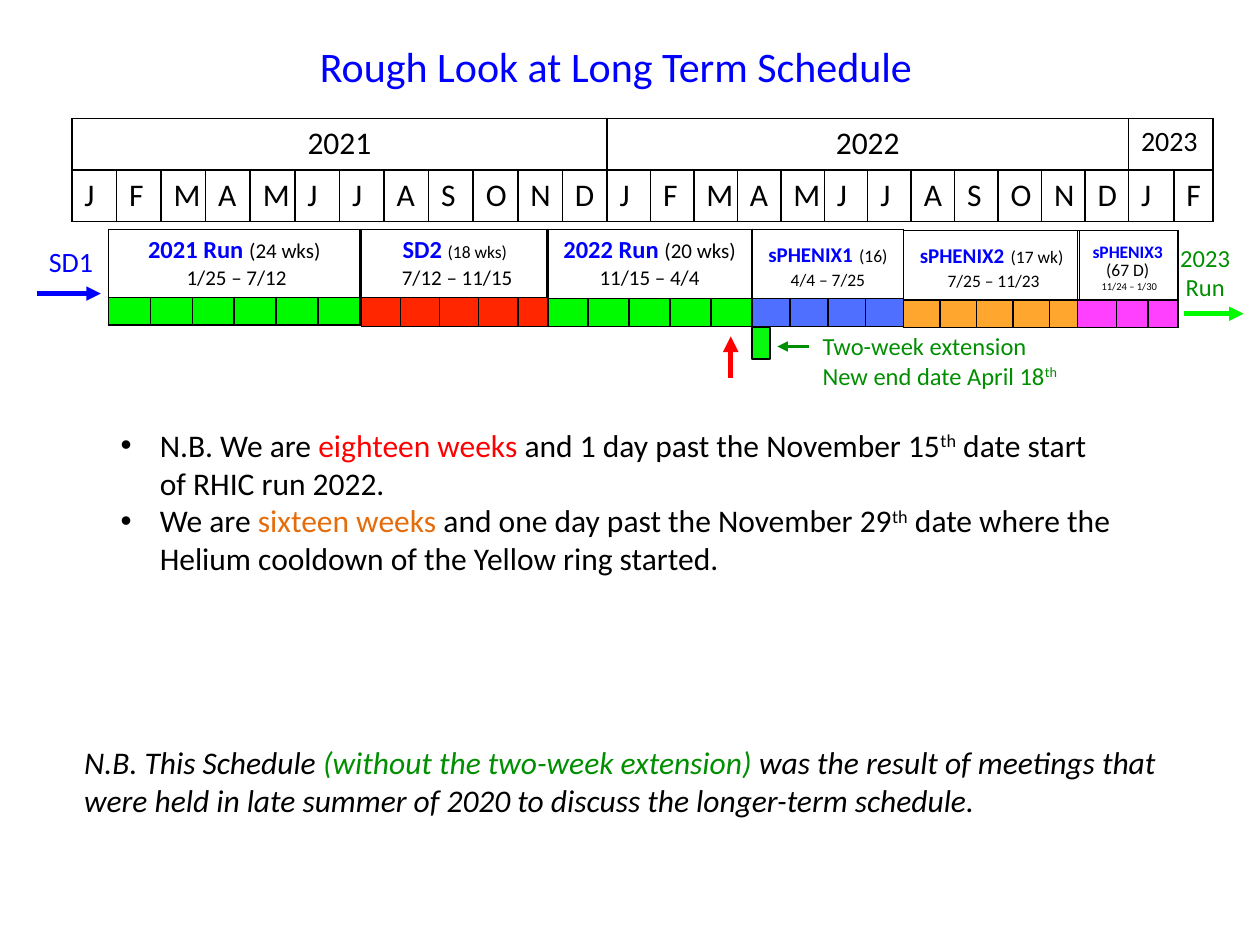
from typing import NamedTuple, Optional

from lxml import etree
from pptx import Presentation
from pptx import util as u
from pptx.dml.color import RGBColor
from pptx.enum import shapes, text
from pptx.oxml import ns

Inches, Pt = u.Inches, u.Pt
BLACK, BLUE, GREEN, RED = "000000", "0000FF", "008F00", "FF0000"
LIME, ORANGE = "00FA00", "E46C0A"
CENTER = text.PP_ALIGN.CENTER


class Run(NamedTuple):
    text: str
    size: Optional[float] = None
    color: Optional[str] = None
    bold: bool = False
    raised: bool = False


class Phase(NamedTuple):
    left: float
    top: float
    widths: list
    heights: tuple
    color: str
    opacity: int
    label: list
    spacing: Optional[float] = None


class Arrow(NamedTuple):
    start: tuple
    end: tuple
    color: str
    weight: float


class Note(NamedTuple):
    box: tuple
    paragraphs: list
    style: dict
    wrap: bool = True


def name(label: str, size: float = 14) -> Run:
    return Run(label, size, BLUE, bold=True)


def th() -> Run:
    return Run("th", raised=True)


PHASES = [
    Phase(0.86, 1.82, [2 / 6] * 6, (0.54, 0.22), LIME, 100,
          [[name("2021 Run "), Run("(24 wks)", 12)], [Run(" 1/25 – 7/12", 12)]]),
    Phase(4.34, 1.82, [1.63 / 5] * 5, (0.55, 0.22), LIME, 100,
          [[name("2022 Run "), Run("(20 wks) 11/15 – 4/4", 12)]]),
    Phase(2.87, 1.82, [0.31] * 4 + [0.23], (0.54, 0.23), "FF2600", 100,
          [[name("SD2 "), Run("(18 wks)", 10)], [Run(" 7/12 – 11/15", 12)]]),
    Phase(5.97, 1.82, [0.3] * 4, (0.55, 0.22), "0432FF", 70,
          [[name("sPHENIX1", 12), name(" ", 16), Run("(16) 4/4 – 7/25", 10)]]),
    Phase(7.17, 1.83, [0.29] * 4 + [0.23], (0.55, 0.22), "FF9300", 82,
          [[name("sPHENIX2", 12), name(" ", 16), Run("(17 wk)", 10)],
           [Run(" 7/25 – 11/23", 10)]]),
    Phase(8.55, 1.83, [0.31, 0.25, 0.23], (0.54, 0.22), "FF40FF", 100,
          [[name("sPHENIX3", 10), name(" ", 16), Run("(67 D)", 10)],
           [Run(" ", 8), Run("11/24 – 1/30", 6)]], 0.78),
]

ARROWS = [
    Arrow((0.29, 2.33), (0.8, 2.33), BLUE, 2.75),
    Arrow((9.4, 2.49), (9.87, 2.49), LIME, 2.75),
    Arrow((5.8, 3), (5.8, 2.67), RED, 3),
    Arrow((6.42, 2.75), (6.17, 2.75), GREEN, 1.5),
]

NOTES = [
    Note((0.29, 1.89, 0.56, 0.37), [[Run("SD1")]], dict(size=16, color=BLUE), wrap=False),
    Note((2.44, 0.27, 5.13, 0.5), [[Run("Rough Look at Long Term Schedule")]],
         dict(size=24, color=BLUE)),
    Note((9.2, 1.88, 0.73, 0.57), [[Run("2023")], [Run("Run")]],
         dict(size=14, color=GREEN, align=CENTER)),
    Note((6.43, 2.58, 2.9, 0.57),
         [[Run("Two-week extension")], [Run("New end date April 18"), th()]],
         dict(size=14, color=GREEN)),
    Note((0.86, 3.33, 8.09, 1.31),
         [[Run("N.B. We are "), Run("eighteen weeks ", color=RED),
           Run("and 1 day past the November 15"), th(),
           Run(" date start of RHIC run 2022.")],
          [Run("We are "), Run("sixteen weeks ", color=ORANGE),
           Run("and one day past the November 29"), th(),
           Run(" date where the Helium cooldown of the Yellow ring started.")]],
         dict(bullet=True)),
    Note((0.57, 5.85, 8.93, 0.71),
         [[Run("N.B. This Schedule "),
           Run("(without the two-week extension)", color=GREEN),
           Run(" was the result of meetings that were held in late summer of 2020 "
               "to discuss the longer-term schedule.")]],
         dict(italic=True)),
]


def rgb(color: str) -> RGBColor:
    return RGBColor.from_string(color)


def add_xml(parent, tag: str, **attributes):
    return etree.SubElement(parent, ns.qn(tag), **attributes)


def write_text(frame, paragraphs: list, size: float = 18, color: str = BLACK,
               align=None, italic: bool = False, spacing=None, bullet: bool = False) -> None:
    for index, runs in enumerate(paragraphs):
        paragraph = frame.add_paragraph() if index else frame.paragraphs[0]
        paragraph.alignment = align
        if spacing:
            paragraph.line_spacing = spacing
        if bullet:
            properties = paragraph._p.get_or_add_pPr()
            properties.set("marL", str(Inches(0.31)))
            properties.set("indent", str(Inches(-0.31)))
            add_xml(properties, "a:buFont", typeface="Arial")
            add_xml(properties, "a:buChar", char="•")
        for part in runs:
            run = paragraph.add_run()
            run.text = part.text
            run.font.name = "Calibri"
            run.font.size = Pt(part.size or size)
            run.font.bold = part.bold
            run.font.italic = italic
            run.font.color.rgb = rgb(part.color or color)
            if part.raised:
                run.font._element.set("baseline", "30000")


def add_grid(slide, left: float, top: float, widths: list, heights: tuple):
    """Add an unfilled table with thin black borders."""
    table = slide.shapes.add_table(
        len(heights), len(widths), Inches(left), Inches(top),
        Inches(sum(widths)), Inches(sum(heights))).table
    table.first_row = table.horz_banding = False
    for column, width in zip(table.columns, widths):
        column.width = Inches(width)
    for row, height in zip(table.rows, heights):
        row.height = Inches(height)
    for cell in table.iter_cells():
        properties = cell._tc.get_or_add_tcPr()
        for side in ("L", "R", "T", "B"):
            border = add_xml(properties, f"a:ln{side}", w=str(Pt(1)))
            add_xml(add_xml(border, "a:solidFill"), "a:srgbClr", val=BLACK)
        cell.fill.background()
    return table


def add_calendar(slide) -> None:
    widths = [4.25 / 12] * 12 + [4.14 / 12] * 12 + [0.36, 0.31]
    table = add_grid(slide, 0.57, 0.94, widths, (0.41, 0.41))
    for year, first, last, size, align in (("2021", 0, 11, 18, CENTER),
                                           ("2022", 12, 23, 18, CENTER),
                                           ("2023", 24, 25, 16, None)):
        table.cell(0, first).merge(table.cell(0, last))
        write_text(table.cell(0, first).text_frame, [[Run(year)]], size=size, align=align)
    for column, month in enumerate("JFMAMJJASOND" * 2 + "JF"):
        write_text(table.cell(1, column).text_frame, [[Run(month)]])


def add_phase(slide, phase: Phase) -> None:
    table = add_grid(slide, phase.left, phase.top, phase.widths, phase.heights)
    last = len(phase.widths) - 1
    table.cell(0, 0).merge(table.cell(0, last))
    write_text(table.cell(0, 0).text_frame, phase.label, align=CENTER, spacing=phase.spacing)
    for column in range(last + 1):
        bar = table.cell(1, column)
        bar.margin_top = bar.margin_bottom = 0
        # A small empty line keeps the bar low
        add_xml(bar.text_frame.paragraphs[0]._p, "a:endParaRPr", sz="600")
        bar.fill.solid()
        bar.fill.fore_color.rgb = rgb(phase.color)
        if phase.opacity < 100:
            shade = bar._tc.tcPr.find(ns.qn("a:solidFill"))[0]
            add_xml(shade, "a:alpha", val=str(phase.opacity * 1000))


def add_arrow(slide, arrow: Arrow) -> None:
    connector = slide.shapes.add_connector(
        shapes.MSO_CONNECTOR.STRAIGHT, *map(Inches, arrow.start + arrow.end))
    connector.line.color.rgb = rgb(arrow.color)
    connector.line.width = Pt(arrow.weight)
    add_xml(connector.line._get_or_add_ln(), "a:tailEnd", type="triangle")
    add_xml(connector._element.spPr, "a:effectLst")


def add_note(slide, note: Note) -> None:
    frame = slide.shapes.add_textbox(*map(Inches, note.box)).text_frame
    frame.word_wrap = note.wrap
    frame.auto_size = text.MSO_AUTO_SIZE.SHAPE_TO_FIT_TEXT
    write_text(frame, note.paragraphs, **note.style)


def main() -> None:
    deck = Presentation()
    deck.slide_width, deck.slide_height = Inches(10), Inches(7.5)
    slide = deck.slides.add_slide(deck.slide_layouts[6])

    # Calendar and run phases
    add_calendar(slide)
    for phase in PHASES:
        add_phase(slide, phase)

    # Two-week extension block
    extension = slide.shapes.add_shape(
        shapes.MSO_SHAPE.RECTANGLE, *map(Inches, (5.97, 2.6, 0.14, 0.25)))
    extension.shadow.inherit = False
    extension.fill.solid()
    extension.fill.fore_color.rgb = rgb("08F90D")
    extension.line.color.rgb = rgb(BLACK)
    extension.line.width = Pt(1)

    # Arrows and notes
    for arrow in ARROWS:
        add_arrow(slide, arrow)
    for note in NOTES:
        add_note(slide, note)
    deck.save("out.pptx")


if __name__ == "__main__":
    main()
